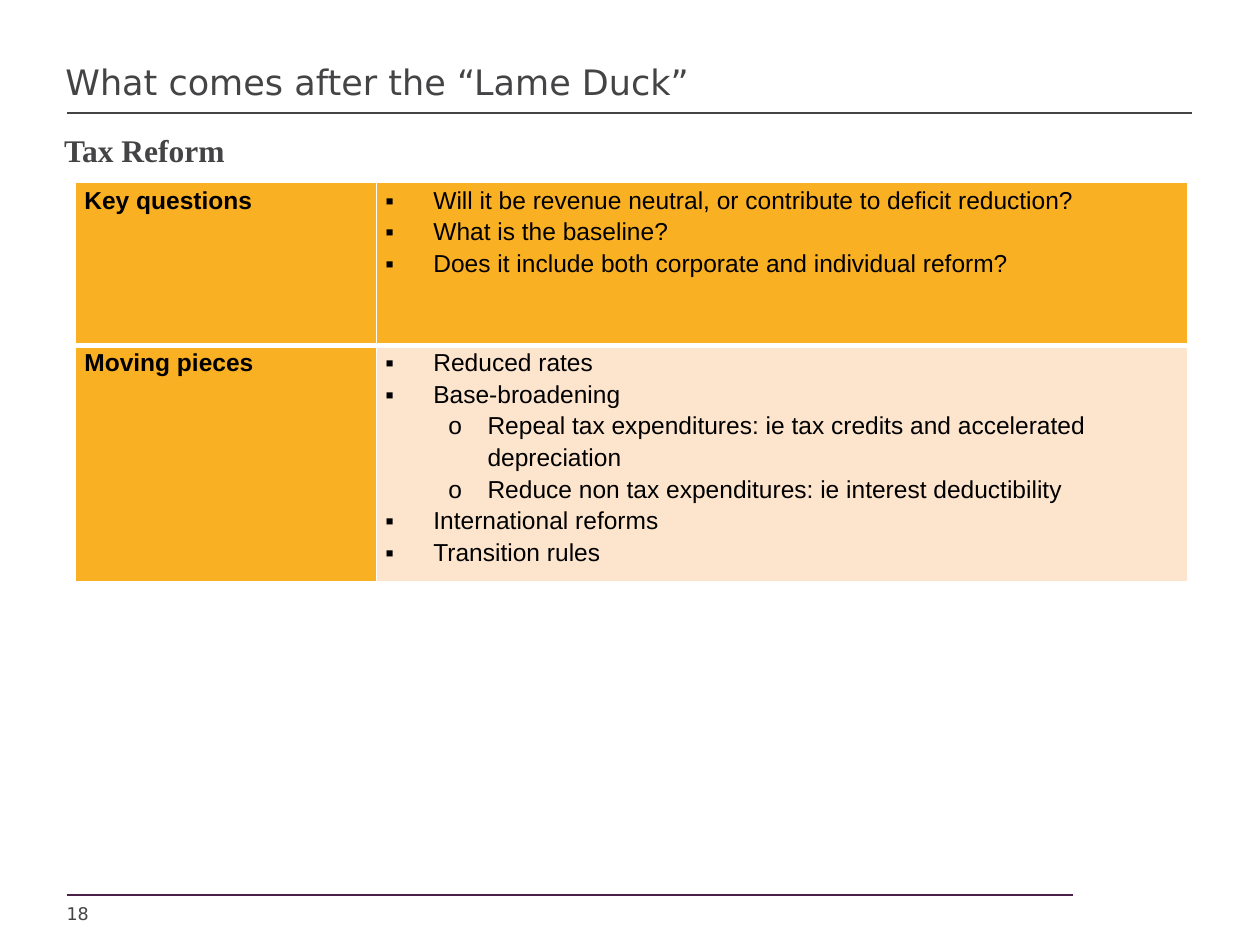
from lxml.etree import SubElement
from pptx import Presentation
from pptx.dml.color import RGBColor
from pptx.enum.shapes import MSO_CONNECTOR
from pptx.enum.text import MSO_ANCHOR
from pptx.oxml.ns import qn
from pptx.util import Inches, Pt

COLORS = {
    "text": "444446",
    "black": "000000",
    "footer": "4C1F48",
    "orange": "FAB023",
    "peach": "FDE4CD",
    "white": "FFFFFF",
}
# Bullet character, left margin and hanging indent in inches, by level
BULLETS = [("▪", 0.38, 0.38), ("o", 0.81, 0.31)]
ROWS = [
    ("Key questions", "orange", 3, [
        (0, "Will it be revenue neutral, or contribute to deficit reduction?"),
        (0, "What is the baseline?"),
        (0, "Does it include both corporate and individual reform?"),
    ]),
    ("Moving pieces", "peach", 1, [
        (0, "Reduced rates"),
        (0, "Base-broadening"),
        (1, "Repeal tax expenditures: ie tax credits and accelerated depreciation"),
        (1, "Reduce non tax expenditures: ie interest deductibility"),
        (0, "International reforms"),
        (0, "Transition rules"),
    ]),
]


def color(name):
    return RGBColor.from_string(COLORS[name])


def style_font(paragraph, name, size, color_name, bold=False):
    font = paragraph.font
    font.name, font.size, font.bold = name, Pt(size), bold
    font.color.rgb = color(color_name)


def add_text(slide, box, text, font_name, size, bold=False, anchor=MSO_ANCHOR.TOP):
    shape = slide.shapes.add_textbox(*map(Inches, box))
    frame = shape.text_frame
    frame.word_wrap = True
    frame.vertical_anchor = anchor
    paragraph = frame.paragraphs[0]
    paragraph.text = text
    style_font(paragraph, font_name, size, "text", bold)
    return paragraph


def add_rule(slide, left, top, width, color_name):
    rule = slide.shapes.add_connector(
        MSO_CONNECTOR.STRAIGHT,
        Inches(left), Inches(top), Inches(left + width), Inches(top))
    rule.line.color.rgb = color(color_name)
    rule.line.width = Pt(1.25)
    SubElement(rule._element.spPr, qn("a:effectLst"))


def add_header(slide, left, top, width):
    add_text(slide, (left, top, width, 0.48), "What comes after the “Lame Duck”",
             "DejaVu Sans", 20, anchor=MSO_ANCHOR.MIDDLE)
    add_rule(slide, left + 0.11, top + 0.49, 8.93, "text")
    subtitle = add_text(slide, (left - 0.01, top + 0.6, width, 0.4), "Tax Reform",
                        "Times New Roman", 18, bold=True)
    subtitle.line_spacing = 0.95


def add_footer(slide, left, top, width):
    add_rule(slide, left, top, width, "footer")
    add_text(slide, (left - 0.1, top + 0.02, 0.44, 0.27), "18", "DejaVu Sans", 10)


def set_borders(cell, bottom_width):
    properties = cell._tc.get_or_add_tcPr()
    for side, width in (("L", 1), ("R", 1), ("T", 1), ("B", bottom_width)):
        line = SubElement(properties, qn(f"a:ln{side}"), w=str(Pt(width)))
        fill = SubElement(line, qn("a:solidFill"))
        SubElement(fill, qn("a:srgbClr"), val=COLORS["white"])


def set_bullet(paragraph, level):
    character, margin, hanging = BULLETS[level]
    paragraph.level = level
    properties = paragraph._p.get_or_add_pPr()
    properties.set("marL", str(Inches(margin)))
    properties.set("indent", str(-Inches(hanging)))
    SubElement(properties, qn("a:buFont"), typeface="Arial")
    SubElement(properties, qn("a:buChar"), char=character)


def fill_cell(cell, fill_name, bottom_width, items, bold=False):
    """Write (level, text) items; a level of None means no bullet."""
    set_borders(cell, bottom_width)
    cell.fill.solid()
    cell.fill.fore_color.rgb = color(fill_name)
    cell.margin_left = cell.margin_right = Inches(0.07)
    cell.margin_top = cell.margin_bottom = 0
    frame = cell.text_frame
    for index, (level, text) in enumerate(items):
        paragraph = frame.add_paragraph() if index else frame.paragraphs[0]
        paragraph.text = text
        paragraph.line_spacing = 1.15
        if level is not None:
            set_bullet(paragraph, level)
        style_font(paragraph, "Arial", 14, "black", bold)


def add_reform_table(slide, left, top, column_widths, row_heights):
    table = slide.shapes.add_table(
        len(row_heights), len(column_widths), Inches(left), Inches(top),
        Inches(sum(column_widths)), Inches(sum(row_heights))).table
    table.first_row = table.horz_banding = False
    for column, width in zip(table.columns, column_widths):
        column.width = Inches(width)
    for row, height, content in zip(table.rows, row_heights, ROWS):
        row.height = Inches(height)
        heading, fill_name, bottom_width, items = content
        fill_cell(row.cells[0], "orange", bottom_width, [(None, heading)], bold=True)
        fill_cell(row.cells[1], fill_name, bottom_width, items)


def main():
    presentation = Presentation()
    presentation.slide_width, presentation.slide_height = Inches(10), Inches(7.5)
    slide = presentation.slides.add_slide(presentation.slide_layouts[6])
    add_footer(slide, 0.53, 7.1, 7.99)
    add_header(slide, 0.42, 0.41, 9.19)
    add_reform_table(slide, 0.6, 1.45, (2.39, 6.44), (1.29, 1.41))
    presentation.save("out.pptx")


if __name__ == "__main__":
    main()
